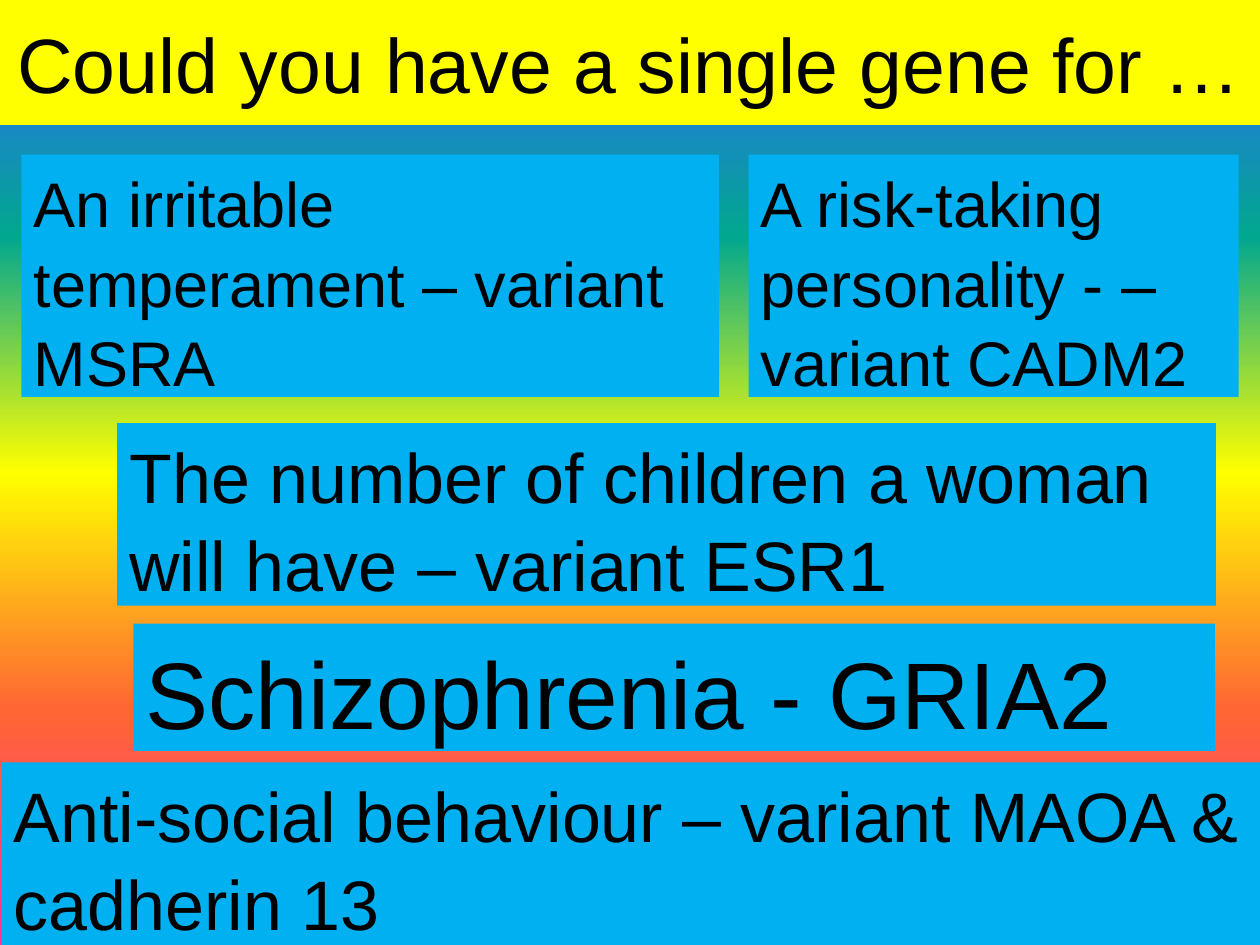
"""Build a slide that lists traits and the gene variants tied to them."""
from lxml import etree
from pptx import Presentation
from pptx import util as u
from pptx.dml.color import RGBColor
from pptx.enum import shapes, text
from pptx.oxml.ns import qn

BLACK = RGBColor(0, 0, 0)
YELLOW = RGBColor(0xFF, 0xFF, 0)
BLUE = RGBColor(0, 0xB0, 0xF0)
STOPS = [RGBColor(0xFF, 0x33, 0x99), RGBColor(0xFF, 0x66, 0x33), YELLOW,
         RGBColor(0x01, 0xA7, 0x8F), RGBColor(0x33, 0x66, 0xFF)]


def write(frame, words, size):
    run = frame.paragraphs[0].add_run()
    run.text = words
    run.font.name = "Arial"
    run.font.size = u.Pt(size)
    run.font.color.rgb = BLACK


deck = Presentation()
deck.slide_width, deck.slide_height = u.Cm(25.4), u.Cm(19.05)
slide = deck.slides.add_slide(deck.slide_layouts[5])

fill = slide.background.fill
fill.gradient()
fill.gradient_angle = 90
ramp = slide.element.find(".//" + qn("a:gsLst"))
for old in list(ramp):
    ramp.remove(old)
for i, tone in enumerate(STOPS):
    stop = etree.SubElement(ramp, qn("a:gs"), pos=str(i * 25000))
    etree.SubElement(stop, qn("a:srgbClr"), val=str(tone))

title = slide.shapes.title
title.left, title.top = u.Cm(0), u.Cm(0)
title.width, title.height = u.Cm(25.4), u.Cm(2.52)
title.fill.solid()
title.fill.fore_color.rgb = YELLOW
frame = title.text_frame
frame.auto_size = text.MSO_AUTO_SIZE.NONE
frame.vertical_anchor = text.MSO_ANCHOR.MIDDLE
frame.paragraphs[0].alignment = text.PP_ALIGN.CENTER
write(frame, "Could you have a single gene for …", 44)

traits = [
    (15.09, 3.12, 9.88, 4.88, 36, "A risk-taking personality - – variant CADM2"),
    (0.43, 3.12, 14.07, 4.88, 36, "An irritable temperament – variant MSRA"),
    (0.03, 15.37, 25.4, 3.68, 40,
     "Anti-social behaviour – variant MAOA & cadherin 13"),
    (2.36, 8.53, 22.15, 3.68, 40,
     "The number of children a woman will have – variant ESR1"),
    (2.69, 12.57, 21.8, 2.57, 54, "Schizophrenia - GRIA2"),
]
for left, top, width, height, size, words in traits:
    box = slide.shapes.add_shape(shapes.MSO_SHAPE.RECTANGLE, u.Cm(left),
                                 u.Cm(top), u.Cm(width), u.Cm(height))
    box.shadow.inherit = False
    box.fill.solid()
    box.fill.fore_color.rgb = BLUE
    box.line.fill.background()
    frame = box.text_frame
    frame.word_wrap = True
    frame.auto_size = text.MSO_AUTO_SIZE.SHAPE_TO_FIT_TEXT
    frame.vertical_anchor = text.MSO_ANCHOR.TOP
    frame.paragraphs[0].alignment = text.PP_ALIGN.LEFT
    frame.paragraphs[0].line_spacing = 1.05
    write(frame, words, size)

deck.save("out.pptx")
